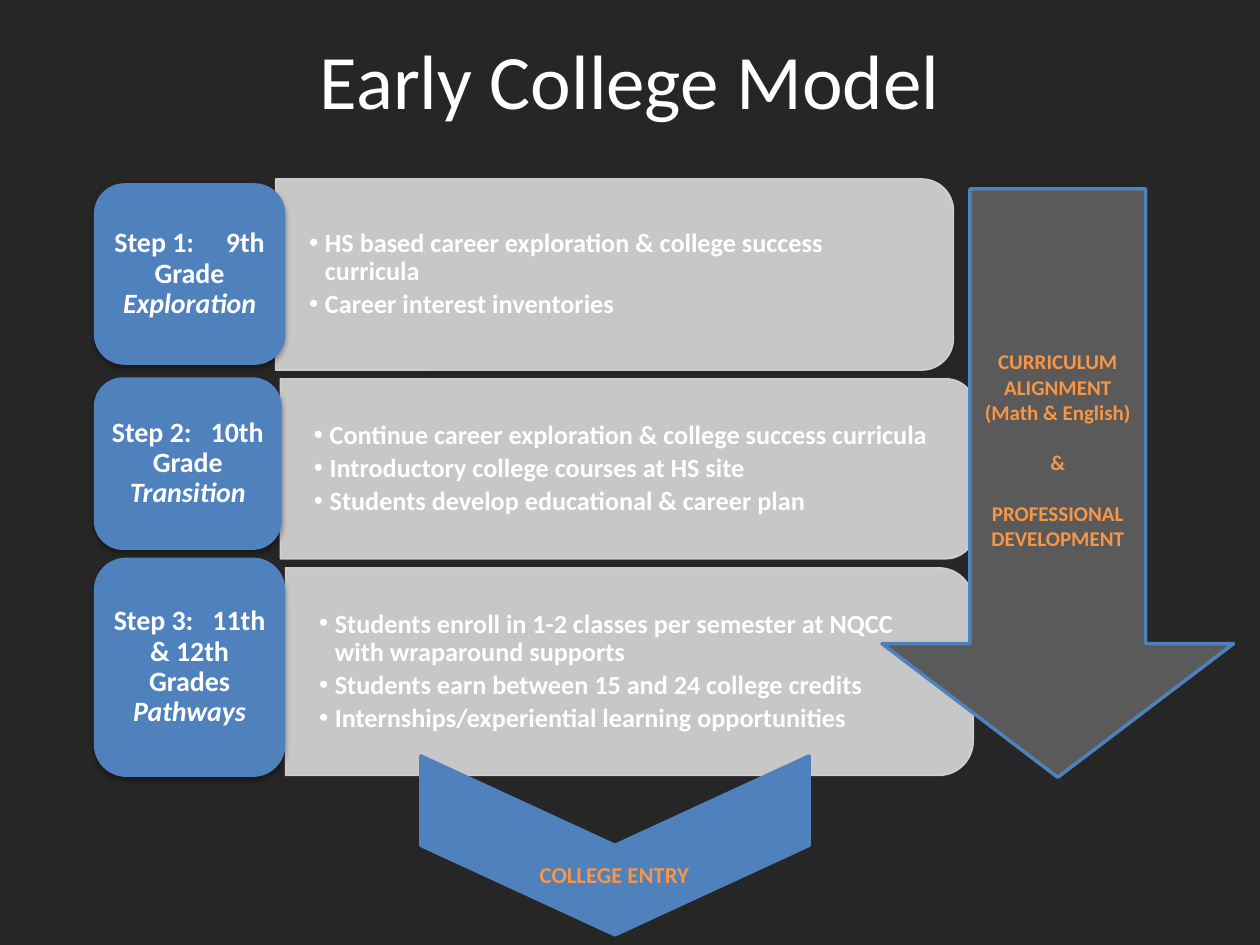
from dataclasses import dataclass

import lxml.etree
import pptx
import pptx.dml.color
import pptx.enum.shapes
import pptx.enum.text
import pptx.oxml
import pptx.oxml.ns
import pptx.util

Pt = pptx.util.Pt
qn = pptx.oxml.ns.qn
Shape = pptx.enum.shapes.MSO_SHAPE
Align = pptx.enum.text.PP_ALIGN
Anchor = pptx.enum.text.MSO_ANCHOR

COLORS = {
    "back": "262626",
    "white": "FFFFFF",
    "bar": "D9D9D9",
    "blue": "4F81BD",
    "arrow": "5A5A5A",
    "orange": "F79646",
}
FONT = "Calibri"
CORNER = 0.0488  # text inset of a rounded corner, as a share of the height
NS = "http://schemas.openxmlformats.org/drawingml/2006/main"
SHADOW = (
    f'<a:effectLst xmlns:a="{NS}"><a:outerShdw blurRad="40000" dist="23000" '
    'dir="5400000" rotWithShape="0"><a:srgbClr val="000000">'
    '<a:alpha val="35000"/></a:srgbClr></a:outerShdw></a:effectLst>'
)


@dataclass
class Box:
    left: float
    top: float
    width: float
    height: float

    def turned(self) -> "Box":
        """The frame that covers this box once rotated by a quarter turn."""
        shift = (self.width - self.height) / 2
        return Box(self.left + shift, self.top - shift, self.height, self.width)


@dataclass
class Step:
    label: str
    grade: str
    gap: float
    phase: str
    tag: Box
    bar: Box
    items: list[str]


STEPS = [
    Step("Step 1:", "9th Grade", 14.5, "Exploration",
         Box(54, 105.1, 108.7, 103), Box(157.5, 102.2, 387.4, 109.4),
         ["HS based career exploration & college success curricula",
          "Career interest inventories"]),
    Step("Step 2:", "10th Grade", 7.2, "Transition",
         Box(54, 216, 106.6, 97.9), Box(160.2, 216.4, 397.4, 103),
         ["Continue career exploration & college success curricula",
          "Introductory college courses at HS site",
          "Students develop educational & career plan"]),
    Step("Step 3:", "11th & 12th Grades", 7.2, "Pathways",
         Box(54, 319, 108.7, 124.6), Box(163.1, 324.4, 393.1, 118.8),
         ["Students enroll in 1-2 classes per semester at NQCC "
          "with wraparound supports",
          "Students earn between 15 and 24 college credits",
          "Internships/experiential learning opportunities"]),
]


def rgb(name: str) -> pptx.dml.color.RGBColor:
    return pptx.dml.color.RGBColor.from_string(COLORS[name])


def place(shape, box: Box) -> None:
    shape.left, shape.top = Pt(box.left), Pt(box.top)
    shape.width, shape.height = Pt(box.width), Pt(box.height)


def draw(slide, kind, box: Box, fill: str, line: str, weight: float):
    shape = slide.shapes.add_shape(
        kind, Pt(box.left), Pt(box.top), Pt(box.width), Pt(box.height))
    shape.shadow.inherit = False
    shape.fill.solid()
    shape.fill.fore_color.rgb = rgb(fill)
    shape.line.color.rgb = rgb(line)
    shape.line.width = Pt(weight)
    return shape


def style(para, size: float, color: str, bold: bool = True,
          align=Align.CENTER) -> None:
    para.alignment = align
    para.font.name = FONT
    para.font.size = Pt(size)
    para.font.bold = bold
    para.font.color.rgb = rgb(color)


def pad(frame, side: float, end: float) -> None:
    frame.word_wrap = True
    frame.vertical_anchor = Anchor.MIDDLE
    frame.margin_left = frame.margin_right = Pt(side)
    frame.margin_top = frame.margin_bottom = Pt(end)


def add_bar(slide, box: Box) -> None:
    bar = draw(slide, Shape.ROUND_2_SAME_RECTANGLE, box.turned(),
               "bar", "bar", 0.75)
    bar.rotation = 90
    for color in bar._element.spPr.iter(qn("a:srgbClr")):
        lxml.etree.SubElement(color, qn("a:alpha"), val="90000")


def fill_list(slide, holder, bar: Box, items: list[str]) -> None:
    slide.shapes._spTree.append(holder._element)  # in front of its bar
    inset = CORNER * bar.height
    place(holder, Box(bar.left, bar.top + inset,
                      bar.width - inset, bar.height - 2 * inset))
    frame = holder.text_frame
    frame.text = "\n".join(items)
    frame.auto_size = pptx.enum.text.MSO_AUTO_SIZE.NONE
    pad(frame, 19.2, 9.9)
    for para in frame.paragraphs:
        style(para, 15, "white", align=Align.LEFT)
        para.line_spacing = 0.9
        para.space_before, para.space_after = Pt(0), Pt(2.6)
        props = para._p.get_or_add_pPr()
        props.set("marL", str(Pt(9)))
        props.set("indent", str(-Pt(9)))
        bullet = pptx.oxml.parse_xml(f'<a:buChar xmlns:a="{NS}" char="•"/>')
        props.find(qn("a:defRPr")).addprevious(bullet)


def add_tag(slide, step: Step) -> None:
    tag = draw(slide, Shape.ROUNDED_RECTANGLE, step.tag, "blue", "blue", 0.75)
    props = tag._element.spPr
    props.replace(props.find(qn("a:effectLst")), pptx.oxml.parse_xml(SHADOW))
    pad(tag.text_frame, 4.8, 2.4)
    para = tag.text_frame.paragraphs[0]
    style(para, 16, "white")
    para.line_spacing = 0.9
    para.add_run().text = step.label
    space = para.add_run()
    space.text = " "
    space._r.get_or_add_rPr().set("spc", str(round(step.gap * 100)))
    para.add_run().text = step.grade
    para.add_line_break()
    phase = para.add_run()
    phase.text = step.phase
    phase.font.italic = True


def add_arrow(slide) -> None:
    arrow = draw(slide, Shape.DOWN_ARROW, Box(504, 108, 200.9, 336.2),
                 "arrow", "blue", 2)
    arrow.adjustments[1] = 0.38
    frame = arrow.text_frame
    pad(frame, 7.2, 3.6)
    frame.text = ("CURRICULUM ALIGNMENT (Math & English)\n&\n"
                  "PROFESSIONAL DEVELOPMENT")
    for para in frame.paragraphs:
        style(para, 12, "orange")
    for para in frame.paragraphs[1:]:
        para.space_before = Pt(14.4)


def add_entry(slide) -> None:
    chevron = draw(slide, Shape.CHEVRON, Box(240.5, 432, 221.8, 102.2).turned(),
                   "blue", "blue", 2)
    chevron.rotation = 90
    label = draw(slide, Shape.RECTANGLE, Box(288, 486, 126, 18),
                 "blue", "blue", 0.75)
    frame = label.text_frame
    pad(frame, 7.2, 3.6)
    frame.vertical_anchor = Anchor.TOP
    frame.text = "COLLEGE ENTRY"
    style(frame.paragraphs[0], 13, "orange")
    frame.paragraphs[0].line_spacing = 1.15


def main() -> None:
    deck = pptx.Presentation()
    deck.slide_width, deck.slide_height = Pt(720), Pt(540)
    slide = deck.slides.add_slide(deck.slide_layouts[4])
    slide.background.fill.solid()
    slide.background.fill.fore_color.rgb = rgb("back")
    title, *lists = slide.placeholders
    place(title, Box(0, 0, 720, 90))
    title.text_frame.text = "Early College Model"
    style(title.text_frame.paragraphs[0], 44, "white", bold=False)
    for step, holder in zip(STEPS, lists):
        add_bar(slide, step.bar)
        fill_list(slide, holder, step.bar, step.items)
        add_tag(slide, step)
    for spare in lists[len(STEPS):]:
        spare._element.getparent().remove(spare._element)
    add_arrow(slide)
    add_entry(slide)
    deck.save("out.pptx")


if __name__ == "__main__":
    main()
